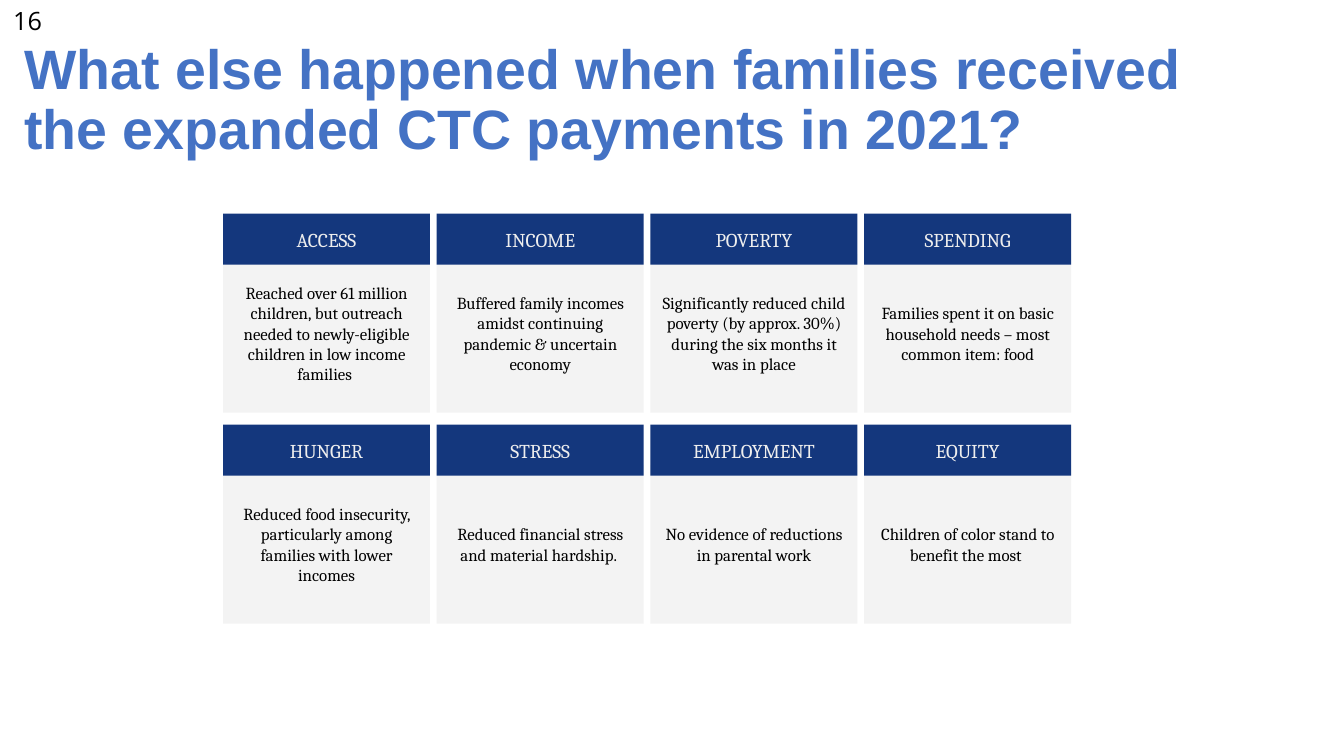
"""Build a slide of eight outcome cards for the expanded CTC payments."""
from pptx import Presentation
from pptx.dml.color import RGBColor
from pptx.enum.shapes import MSO_SHAPE
from pptx.enum.text import MSO_ANCHOR, PP_ALIGN
from pptx.util import Inches, Pt

RECTANGLE = MSO_SHAPE.RECTANGLE
TOP, MIDDLE = MSO_ANCHOR.TOP, MSO_ANCHOR.MIDDLE
LEFT, CENTER = PP_ALIGN.LEFT, PP_ALIGN.CENTER

PAGE_NUMBER = "16"
TITLE = "What else happened when families received the expanded CTC payments in 2021?"
CARDS = [
    ("ACCESS", "Reached over 61 million children, but outreach needed to "
               "newly-eligible children in low income families "),
    ("INCOME", "Buffered family incomes amidst continuing pandemic & uncertain economy"),
    ("POVERTY", "Significantly reduced child poverty (by approx. 30%) during "
                "the six months it was in place"),
    ("SPENDING", "Families spent it on basic household needs – most common item: food"),
    ("HUNGER", "Reduced food insecurity, particularly among families with lower incomes"),
    ("STRESS", "Reduced financial stress and material hardship. "),
    ("EMPLOYMENT", "No evidence of reductions in parental work"),
    ("EQUITY", "Children of color stand to benefit the most "),
]
COLORS = {"title": "4472C4", "header": "14377D", "header_text": "EEEEEE",
          "body": "F3F3F3", "text": "000000"}

SLIDE_WIDTH = 10
SLIDE_HEIGHT = SLIDE_WIDTH * 9 / 16
COLUMNS = 4
GRID_LEFT, GRID_TOP, GRID_WIDTH = 1.66, 1.59, 6.31
CARD_WIDTH, HEADER_HEIGHT = 1.54, 0.38
COLUMN_STEP = (GRID_WIDTH - CARD_WIDTH) / (COLUMNS - 1)
ROW_STEP = 1.57
BODY_OFFSET, BODY_HEIGHT = 0.3, 1.18


def write(shape, text, font="Cambria", size=9, color="text", bold=False,
          align=CENTER, anchor=MIDDLE, inset=0.07, inset_y=0.07, spacing=1.0):
    """Put formatted text into a shape."""
    frame = shape.text_frame
    frame.word_wrap = True
    frame.vertical_anchor = anchor
    frame.margin_left = frame.margin_right = Inches(inset)
    frame.margin_top = frame.margin_bottom = Inches(inset_y)
    paragraph = frame.paragraphs[0]
    paragraph.alignment = align
    paragraph.line_spacing = spacing
    run = paragraph.add_run()
    run.text = text
    run.font.name = font
    run.font.size = Pt(size)
    run.font.bold = bold
    run.font.color.rgb = RGBColor.from_string(COLORS[color])


def add_block(slide, left, top, height, fill):
    """Add a borderless filled rectangle one card wide."""
    shape = slide.shapes.add_shape(RECTANGLE, Inches(left), Inches(top),
                                   Inches(CARD_WIDTH), Inches(height))
    shape.shadow.inherit = False
    shape.fill.solid()
    shape.fill.fore_color.rgb = RGBColor.from_string(COLORS[fill])
    shape.line.fill.background()
    return shape


def add_card(slide, index, heading, message):
    """Place one card at its column and row."""
    row, column = divmod(index, COLUMNS)
    left = GRID_LEFT + column * COLUMN_STEP
    top = GRID_TOP + row * ROW_STEP
    body = add_block(slide, left, top + BODY_OFFSET, BODY_HEIGHT, "body")
    write(body, message)
    header = add_block(slide, left, top, HEADER_HEIGHT, "header")
    write(header, heading, size=10.5, color="header_text")


def main():
    """Assemble and save the slide."""
    presentation = Presentation()
    presentation.slide_width = Inches(SLIDE_WIDTH)
    presentation.slide_height = Inches(SLIDE_HEIGHT)
    slide = presentation.slides.add_slide(presentation.slide_layouts[5])

    title = slide.shapes.title
    title.left, title.top = Inches(0.09), Inches(0.21)
    title.width, title.height = Inches(9.11), Inches(1.09)
    write(title, TITLE, font="Arial", size=29.7, color="title", bold=True,
          align=LEFT, inset=0.09, inset_y=0.05, spacing=0.9)

    number = slide.shapes.add_textbox(0, Inches(-0.01), Inches(0.5), Inches(0.3))
    write(number, PAGE_NUMBER, font="Open Sans", size=13.5, align=LEFT,
          anchor=TOP, inset=0.1, inset_y=0.05)

    for index, (heading, message) in enumerate(CARDS):
        add_card(slide, index, heading, message)

    presentation.save("out.pptx")


if __name__ == "__main__":
    main()
